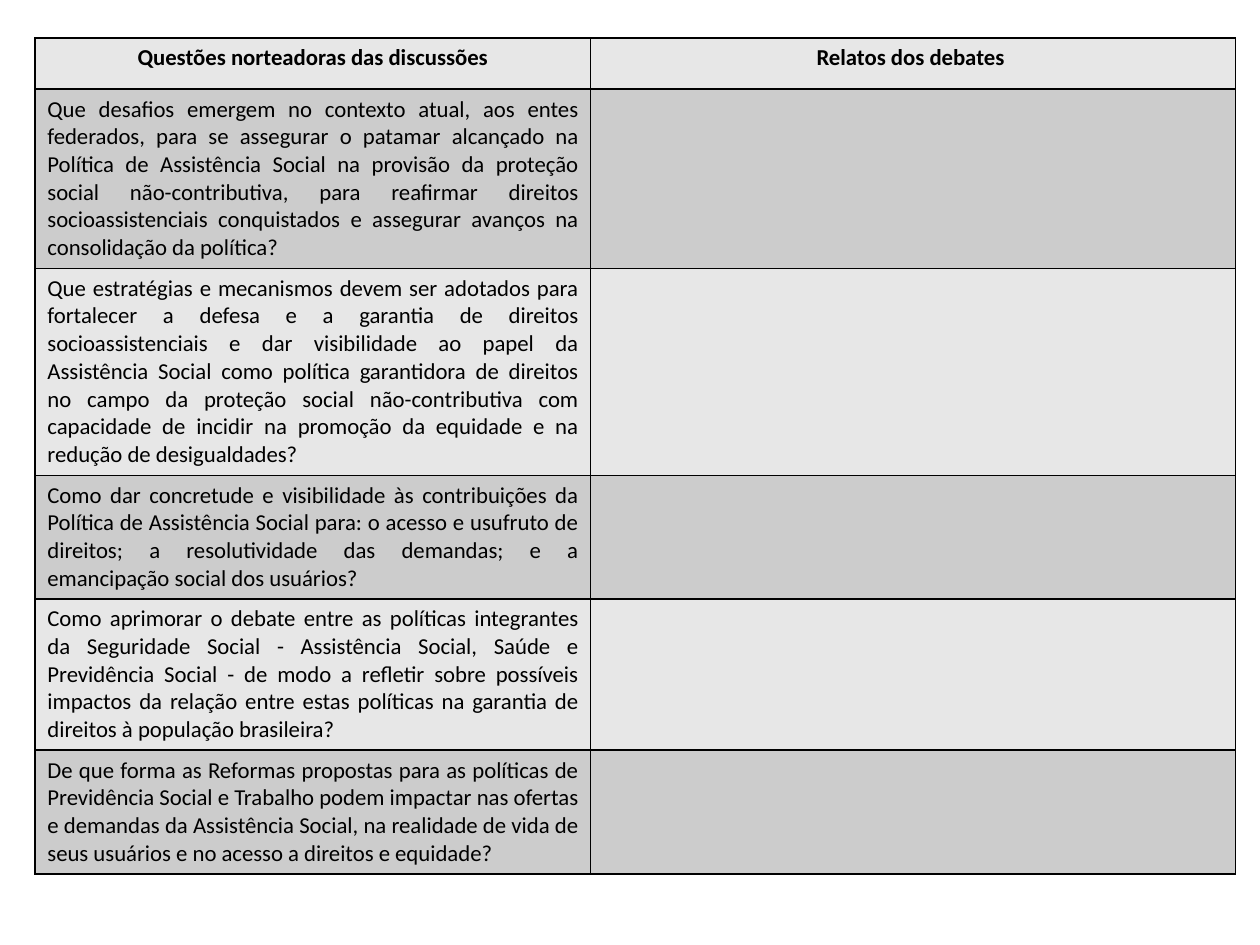
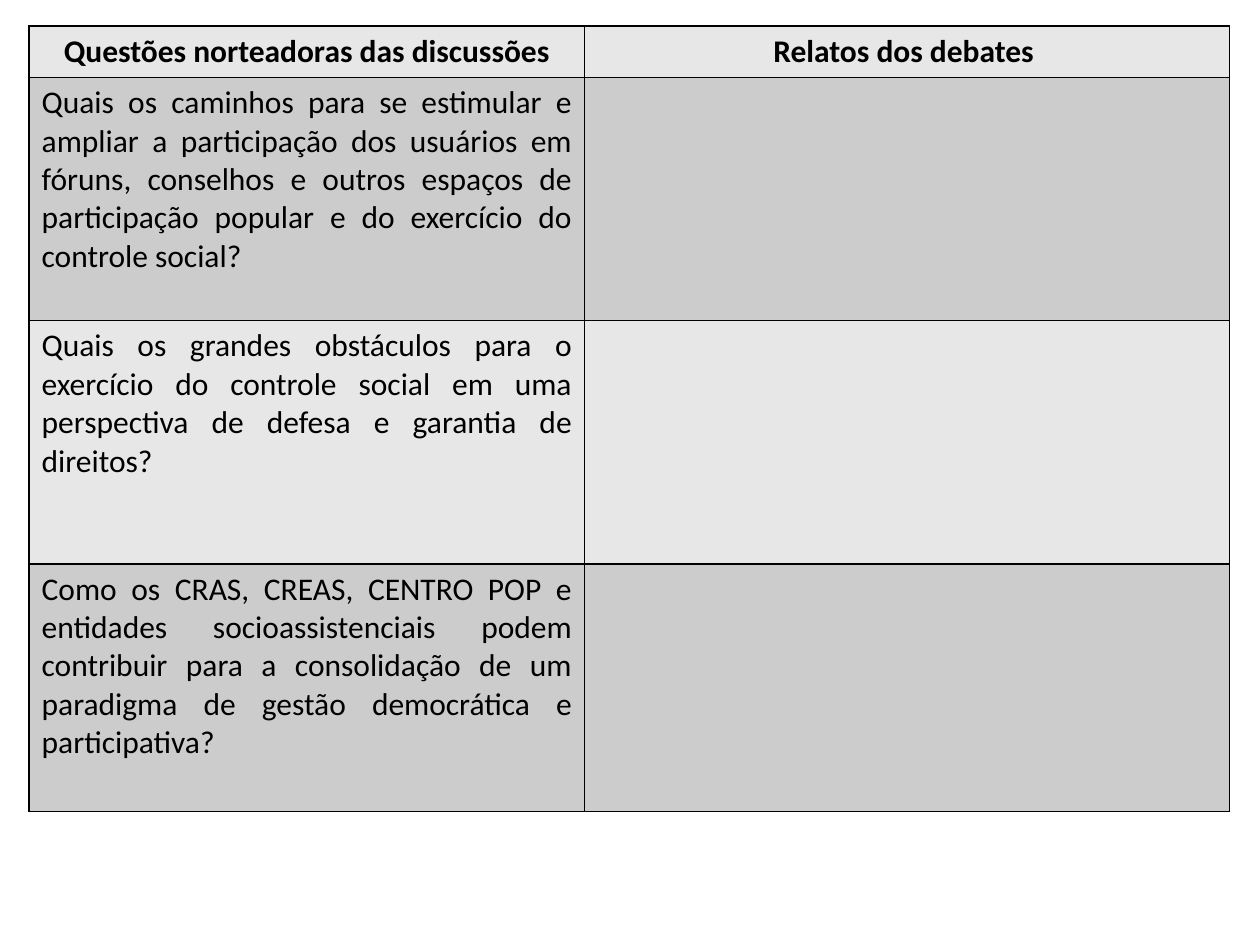
from lxml.etree import SubElement
from pptx import Presentation
from pptx.dml.color import RGBColor
from pptx.enum.text import PP_ALIGN as Align
from pptx.oxml.ns import qn
from pptx.util import Pt

# Shared look
COLORS = {"text": "000000", "border": "000000", "light": "E7E7E7", "dark": "CCCCCC"}
FONT = "Calibri"
COLUMN_WIDTHS = (317.5, 368.6)
HEADER_HEIGHT = 29.2
HEADERS = ("Questões norteadoras das discussões", "Relatos dos debates ")

# Each question comes with the height of its row
DEBATES = [
    {
        "left": 19.9, "top": 21.7, "size": 13,
        "questions": [
            ("Que desafios emergem no contexto atual, aos entes federados, para se "
             "assegurar o patamar alcançado na Política de Assistência Social na provisão "
             "da proteção social não-contributiva, para reafirmar direitos "
             "socioassistenciais conquistados e assegurar avanços na consolidação da "
             "política?", 102.4),
            ("Que estratégias e mecanismos devem ser adotados para fortalecer a defesa e a "
             "garantia de direitos socioassistenciais e dar visibilidade ao papel da "
             "Assistência Social como política garantidora de direitos no campo da "
             "proteção social não-contributiva com capacidade de incidir na promoção da "
             "equidade e na redução de desigualdades?", 118.3),
            ("Como dar concretude e visibilidade às contribuições da Política de "
             "Assistência Social para: o acesso e usufruto de direitos; a resolutividade "
             "das demandas; e a emancipação social dos usuários?", 70.6),
            ("Como aprimorar o debate entre as políticas integrantes da Seguridade Social "
             "- Assistência Social, Saúde e Previdência Social - de modo a refletir sobre "
             "possíveis impactos da relação entre estas políticas na garantia de direitos "
             "à população brasileira?", 86.5),
            ("De que forma as Reformas propostas para as políticas de Previdência Social e "
             "Trabalho podem impactar nas ofertas e demandas da Assistência Social, na "
             "realidade de vida de seus usuários e no acesso a direitos e equidade?", 70.6),
        ],
    },
    {
        "left": 16.6, "top": 15, "size": 18,
        "questions": [
            ("Quais os caminhos para se estimular e ampliar a participação dos usuários em "
             "fóruns, conselhos e outros espaços de participação popular e do exercício do "
             "controle social?", 139),
            ("Quais os grandes obstáculos para o exercício do controle social em uma "
             "perspectiva de defesa e garantia de direitos?", 139),
            ("Como os CRAS, CREAS, CENTRO POP e entidades socioassistenciais podem "
             "contribuir para a consolidação de um paradigma de gestão democrática e "
             "participativa?", 141.5),
        ],
    },
]


def style_cell(cell, fill):
    """Draw a thin border on all four sides, then fill the cell."""
    properties = cell._tc.get_or_add_tcPr()
    for side in ("a:lnL", "a:lnR", "a:lnT", "a:lnB"):
        line = SubElement(properties, qn(side), w=str(Pt(1)))
        line_fill = SubElement(line, qn("a:solidFill"))
        SubElement(line_fill, qn("a:srgbClr"), val=COLORS["border"])
    cell.fill.solid()
    cell.fill.fore_color.rgb = RGBColor.from_string(COLORS[fill])


def write_cell(cell, text, size, alignment, bold):
    cell.text = text
    paragraph = cell.text_frame.paragraphs[0]
    paragraph.alignment = alignment
    font = paragraph.font
    font.name, font.size, font.bold = FONT, Pt(size), bold
    font.color.rgb = RGBColor.from_string(COLORS["text"])


presentation = Presentation()
presentation.slide_width = Pt(720)
presentation.slide_height = Pt(540)
blank_layout = presentation.slide_layouts[6]

for debate in DEBATES:
    slide = presentation.slides.add_slide(blank_layout)
    questions, size = debate["questions"], debate["size"]
    heights = [HEADER_HEIGHT] + [height for _, height in questions]

    # Table frame
    table = slide.shapes.add_table(
        len(heights), len(COLUMN_WIDTHS), Pt(debate["left"]), Pt(debate["top"]),
        Pt(sum(COLUMN_WIDTHS)), Pt(sum(heights))).table
    table.first_row = True
    table.horz_banding = False
    for column, width in zip(table.columns, COLUMN_WIDTHS):
        column.width = Pt(width)

    # Alternating row fills
    for index, (row, height) in enumerate(zip(table.rows, heights)):
        row.height = Pt(height)
        for cell in row.cells:
            style_cell(cell, "dark" if index % 2 else "light")

    # Header row, then one question a row with room for the report
    for cell, header in zip(table.rows[0].cells, HEADERS):
        write_cell(cell, header, size, Align.CENTER, True)
    for index, (question, _) in enumerate(questions, start=1):
        write_cell(table.cell(index, 0), question, size, Align.JUSTIFY, False)

presentation.save("out.pptx")
